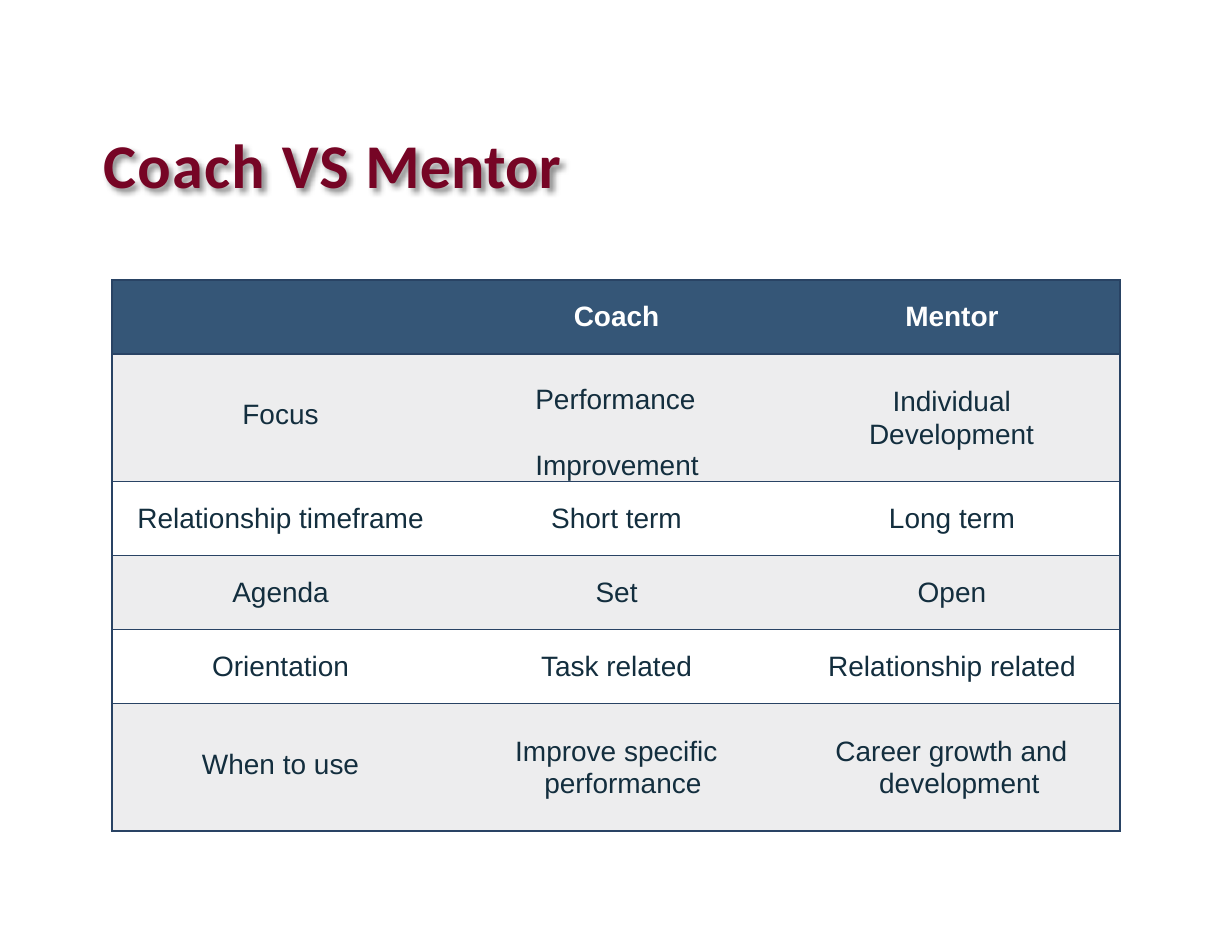
from lxml.etree import SubElement
from pptx import Presentation
from pptx.dml.color import RGBColor
from pptx.enum.text import MSO_ANCHOR, PP_ALIGN
from pptx.oxml import parse_xml
from pptx.oxml.ns import nsdecls, qn
from pptx.util import Inches, Pt

MAROON = RGBColor(0x76, 0x05, 0x25)
NAVY = RGBColor(0x35, 0x56, 0x77)
BORDER = RGBColor(0x29, 0x43, 0x64)
INK = RGBColor(0x13, 0x2E, 0x3E)
GREY = RGBColor(0xED, 0xED, 0xEE)
WHITE = RGBColor(0xFF, 0xFF, 0xFF)

NO_STYLE = "{2D5ABB26-0587-4C30-8999-92F81FD0307C}"
LINE = Pt(21)
COLS = (3.19, 2.71, 3.1)
SHORT, TALL = 0.66, 1.14
# Left and right cell margins of each column
MARGINS = ((0, 0.18), (0, 0.08), (0.1, 0))

ROWS = (
    ("", "Coach", "Mentor"),
    ("Focus", "Performance\nImprovement", "Individual\vDevelopment"),
    ("Relationship timeframe", "Short term", "Long term"),
    ("Agenda", "Set", "Open"),
    ("Orientation", "Task related", "Relationship related"),
    ("When to use", "Improve specific\vperformance",
     "Career growth and\vdevelopment"),
)
# Left margin and first-line indent of the two-line cells
INDENTS = {(1, 1): (0.58, 0.01), (1, 2): (0.86, 0.21),
           (5, 1): (0.67, -0.26), (5, 2): (0.95, -0.39)}
TALL_ROWS = {r for r, c in INDENTS}


def add_title(s, left, top, width, height):
    sp = s.shapes.title
    sp.left, sp.top = Inches(left), Inches(top)
    sp.width, sp.height = Inches(width), Inches(height)
    tf = sp.text_frame
    tf.vertical_anchor = MSO_ANCHOR.MIDDLE
    p = tf.paragraphs[0]
    p.alignment = PP_ALIGN.LEFT
    p.line_spacing = 0.85
    p.font.name, p.font.size, p.font.bold = "Calibri", Pt(40), True
    p.font.color.rgb = MAROON
    for text, spacing in (("Coach ", 90), ("VS ", 80), ("Mentor", 10)):
        r = p.add_run()
        r.text = text
        r.font.size = Pt(40)
        r.font._element.set("spc", str(spacing))
    # Soft shadow behind the words
    sp._element.spPr.append(parse_xml(
        f'<a:effectLst {nsdecls("a")}>'
        '<a:outerShdw blurRad="50800" dist="38100" dir="2700000">'
        '<a:srgbClr val="000000"><a:alpha val="45000"/></a:srgbClr>'
        '</a:outerShdw></a:effectLst>'))


def set_borders(cell, sides):
    tc_pr = cell._tc.get_or_add_tcPr()
    for side in sides:
        ln = SubElement(tc_pr, qn(f"a:ln{side}"), w=str(Pt(1)))
        fill = SubElement(ln, qn("a:solidFill"))
        SubElement(fill, qn("a:srgbClr"), val=str(BORDER))


def fill_cell(cell, row, col):
    left, right = MARGINS[col]
    indent = INDENTS.get((row, col))
    stacked = "\n" in ROWS[row][col]
    if indent:
        left = right = 0
    cell.margin_left, cell.margin_right = Inches(left), Inches(right)
    cell.margin_top = Inches(0.26 if stacked else 0)
    cell.margin_bottom = Inches(0.05 if row in TALL_ROWS and col == 0 else 0)
    cell.vertical_anchor = MSO_ANCHOR.TOP if stacked else MSO_ANCHOR.MIDDLE

    sides = {0: "LTB", 1: "TB", 2: "RTB"}[col]
    set_borders(cell, sides)
    cell.fill.solid()
    cell.fill.fore_color.rgb = NAVY if row == 0 else GREY if row % 2 else WHITE

    tf = cell.text_frame
    tf.text = ROWS[row][col]
    for i, p in enumerate(tf.paragraphs):
        p.alignment = PP_ALIGN.LEFT if indent else PP_ALIGN.CENTER
        if indent:
            p.line_spacing = LINE
            p_pr = p._p.get_or_add_pPr()
            p_pr.set("marL", str(Inches(indent[0])))
            p_pr.set("indent", str(Inches(indent[1])))
        if i:
            p.space_before = LINE
        p.font.name, p.font.size = "Arial", Pt(18)
        p.font.bold = row == 0
        p.font.color.rgb = WHITE if row == 0 else INK


def add_comparison(s, left, top):
    heights = [TALL if r in TALL_ROWS else SHORT for r in range(len(ROWS))]
    frame = s.shapes.add_table(len(ROWS), len(COLS), Inches(left), Inches(top),
                               Inches(sum(COLS)), Inches(sum(heights)))
    table = frame.table
    table.first_row = table.horz_banding = False
    table._tbl.tblPr.find(qn("a:tableStyleId")).text = NO_STYLE
    for column, width in zip(table.columns, COLS):
        column.width = Inches(width)
    for r, height in enumerate(heights):
        table.rows[r].height = Inches(height)
        for c in range(len(COLS)):
            fill_cell(table.cell(r, c), r, c)


def main():
    prs = Presentation()
    prs.slide_width, prs.slide_height = Inches(11), Inches(8.5)
    s = prs.slides.add_slide(prs.slide_layouts[5])
    add_title(s, 0.82, 0.85, 9.35, 1.32)
    add_comparison(s, 1, 2.5)
    prs.save("out.pptx")


if __name__ == "__main__":
    main()
